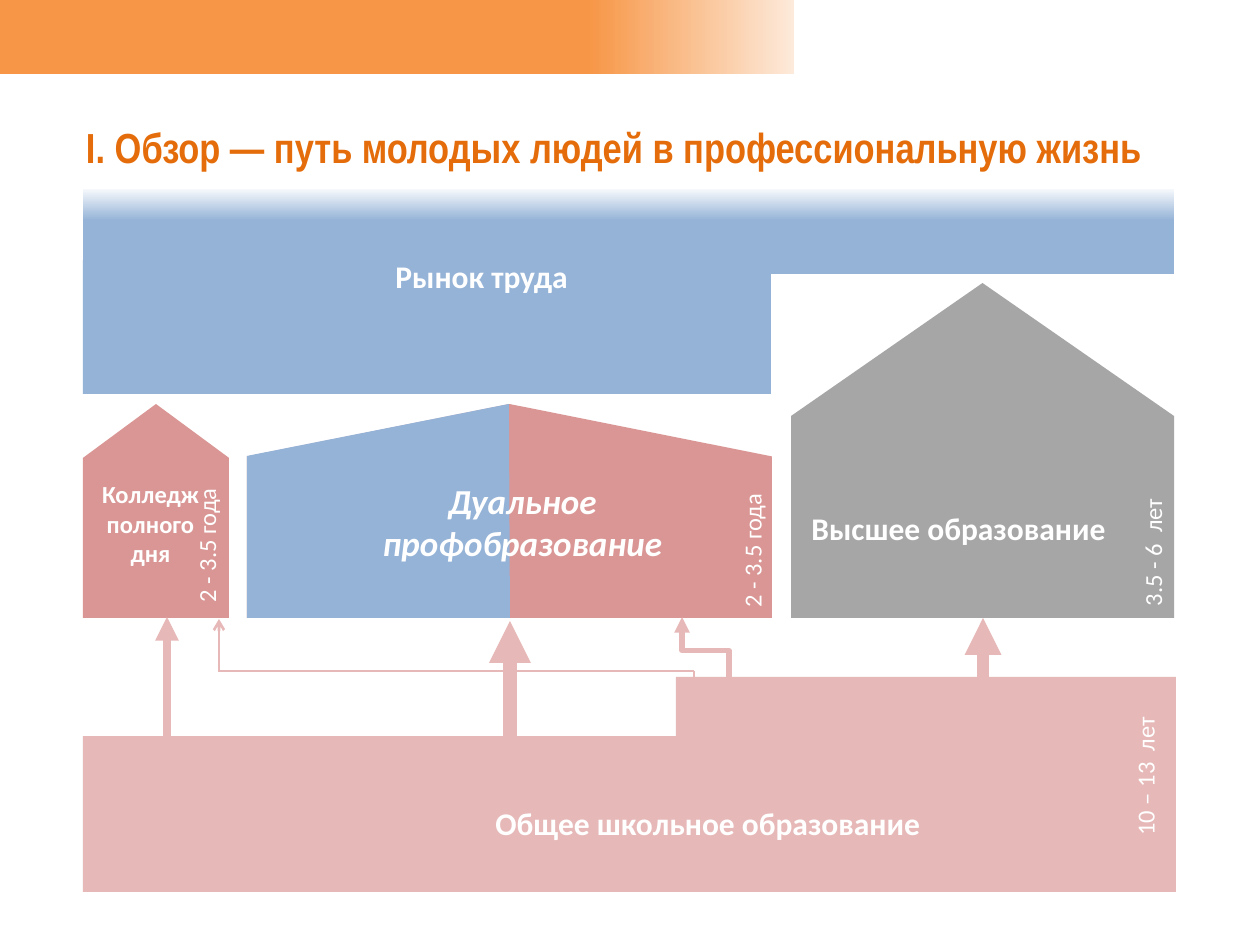
import pptx
import pptx.util
import pptx.dml.color
import pptx.enum.shapes
import pptx.enum.text
import pptx.oxml
import pptx.oxml.ns

PX = 914400 / 126  # EMU in one px
SHAPE = pptx.enum.shapes.MSO_SHAPE
LINK = pptx.enum.shapes.MSO_CONNECTOR
COLORS = {
    "orange": "F79646", "cream": "FDEADA", "title": "E46C0A",
    "pink": "E6B9B8", "rose": "D99694", "gray": "A6A6A6",
    "blue": "95B3D7", "pale": "F6F9FC", "white": "FFFFFF",
}


def emu(*lengths):
    return [round(length * PX) for length in lengths]


def rgb(name):
    return pptx.dml.color.RGBColor.from_string(COLORS[name])


deck = pptx.Presentation()
deck.slide_width, deck.slide_height = emu(1260, 945)
page = deck.slides.add_slide(deck.slide_layouts[5])

# Title
title = page.shapes.title
title.left, title.top, title.width, title.height = emu(15, 103, 1160, 87)
frame = title.text_frame
frame.text = "I. Обзор\u00a0— путь молодых людей в профессиональную жизнь"
frame.word_wrap = True
frame.auto_size = pptx.enum.text.MSO_AUTO_SIZE.NONE
frame.vertical_anchor = pptx.enum.text.MSO_ANCHOR.MIDDLE
frame.margin_left = emu(71)[0]
para = frame.paragraphs[0]
para.alignment = pptx.enum.text.PP_ALIGN.LEFT
span = para.runs[0]
title_format = {"name": "Arial Narrow", "size": pptx.util.Pt(24), "bold": True}
for key, value in title_format.items():
    setattr(span.font, key, value)
span.font.color.rgb = rgb("title")

# Rectangles: plain colour, or gradient angle with (position, colour) stops
rectangles = [
    ((0, 0, 794, 74), (0, [(0.74, "orange"), (1, "cream")])),
    ((676, 677, 500, 136), "pink"),
    ((83, 260, 688, 134), "blue"),
    ((83, 189, 1091, 85), (270, [(0, "pale"), (0.37, "blue")])),
    ((83, 736, 1093, 156), "pink"),
]
for place, paint in rectangles:
    block = page.shapes.add_shape(SHAPE.RECTANGLE, *emu(*place))
    block.shadow.inherit = False
    block.line.fill.background()
    if isinstance(paint, str):
        block.fill.solid()
        block.fill.fore_color.rgb = rgb(paint)
    else:
        angle, stops = paint
        block.fill.gradient()
        block.fill.gradient_angle = angle
        for stop, (position, color) in zip(block.fill.gradient_stops, stops):
            stop.position = position
            stop.color.rgb = rgb(color)

# Houses: right arrows turned to point up
houses = [
    ((83, 404, 146, 214), 0.369, "rose"),
    ((791, 283, 383, 335), 0.397, "gray"),
    ((247, 404, 525, 214), 0.245, "rose"),
]
for (left, top, width, height), roof, color in houses:
    shift = (width - height) / 2
    house = page.shapes.add_shape(
        SHAPE.RIGHT_ARROW, *emu(left + shift, top - shift, height, width))
    house.rotation = 270
    house.adjustments[0], house.adjustments[1] = 1, roof
    house.shadow.inherit = False
    house.line.fill.background()
    house.fill.solid()
    house.fill.fore_color.rgb = rgb(color)

# Blue left half of the dual training house
builder = page.shapes.build_freeform(247, 618, scale=PX)
builder.add_line_segments([(247, 456), (509, 404), (510, 618)], close=True)
half = builder.convert_to_shape()
half.shadow.inherit = False
half.line.fill.background()
half.fill.solid()
half.fill.fore_color.rgb = rgb("blue")

# Arrows and lines: start, end, width in points, head at the end
links = [
    ((983, 702), (983, 618), 7, "triangle"),
    ((510, 756), (510, 621), 8, "triangle"),
    ((167, 736), (167, 617), 4.5, "triangle"),
    ((219, 672), (219, 619), 1.5, "arrow"),
    ((218, 671), (694, 671), 1.5, None),
    ((694, 683), (694, 671), 1.5, None),
    ((672, 674), (739, 627), 3, "triangle"),  # elbow, turned upwards below
]
for start, end, weight, head in links:
    bent = start[0] != end[0] and start[1] != end[1]
    kind = LINK.ELBOW if bent else LINK.STRAIGHT
    link = page.shapes.add_connector(kind, *emu(*start, *end))
    link.line.width = pptx.util.Pt(weight)
    link.line.color.rgb = rgb("pink")
    properties = link._element.spPr
    if bent:
        properties.find(pptx.oxml.ns.qn("a:xfrm")).set("rot", "16200000")
    if head:
        tail = pptx.oxml.parse_xml(
            f'<a:tailEnd {pptx.oxml.ns.nsdecls("a")} type="{head}"/>')
        properties.find(pptx.oxml.ns.qn("a:ln")).append(tail)
    properties.append(pptx.oxml.parse_xml(
        f'<a:effectLst {pptx.oxml.ns.nsdecls("a")}/>'))

# Labels
heading = {"size": pptx.util.Pt(18), "bold": True}
college = {"size": pptx.util.Pt(14), "bold": True}
dual = {"size": pptx.util.Pt(20), "bold": True, "italic": True}
years = {"size": pptx.util.Pt(14)}
LEFT, CENTER = pptx.enum.text.PP_ALIGN.LEFT, pptx.enum.text.PP_ALIGN.CENTER
labels = [
    ("Высшее образование", (799, 503, 333, 50), 0, LEFT, heading),
    ("Общее школьное образование", (483, 798, 465, 50), 0, LEFT, heading),
    ("Рынок труда", (383, 251, 200, 50), 0, LEFT, heading),
    ("Колледж полного дня", (83, 473, 135, 102), 0, CENTER, college),
    ("Дуальное профобразование", (370, 473, 305, 97), 0, CENTER, dual),
    ("10 – 13  лет", (1072, 753, 147, 43), 270, LEFT, years),
    ("3.5 - 6  лет", (1080, 524, 146, 43), 270, LEFT, years),
    ("2 - 3.5 года", (668, 514, 169, 43), 270, LEFT, years),
    ("2 - 3.5 года", (100, 486, 214, 43), 270, LEFT, years),
]
for text, place, turn, alignment, style in labels:
    box = page.shapes.add_textbox(*emu(*place))
    box.rotation = turn
    box.text_frame.word_wrap = True
    para = box.text_frame.paragraphs[0]
    para.alignment = alignment
    span = para.add_run()
    span.text = text
    for key, value in {"name": "Calibri", **style}.items():
        setattr(span.font, key, value)
    span.font.color.rgb = rgb("white")

deck.save("out.pptx")
